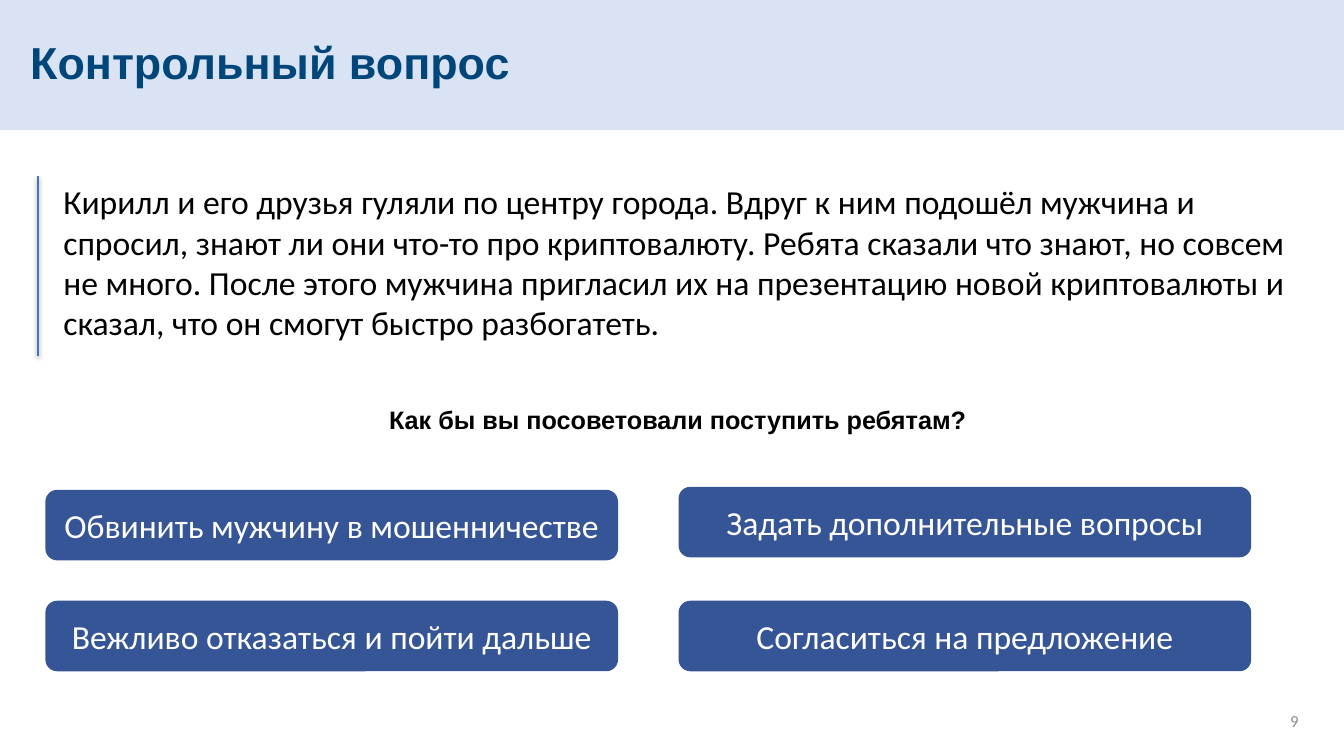
from lxml.etree import SubElement
from pptx import Presentation
from pptx.dml.color import RGBColor
from pptx.enum.shapes import MSO_CONNECTOR, MSO_SHAPE
from pptx.enum.text import MSO_ANCHOR, MSO_AUTO_SIZE, PP_ALIGN
from pptx.oxml.ns import qn
from pptx.util import Inches, Pt

TITLE = {"name": "Arial", "size": Pt(32), "bold": True}
QUESTION = {"name": "Arial", "size": Pt(18), "bold": True}
BODY = {"name": "Calibri", "size": Pt(24), "bold": False}
NUMBER = {"name": "Calibri", "size": Pt(12), "bold": False}

STORY = (
    "Кирилл и его друзья гуляли по центру города. Вдруг к ним подошёл мужчина и "
    "спросил, знают ли они что-то про криптовалюту. Ребята сказали что знают, но "
    "совсем не много. После этого мужчина пригласил их на презентацию новой "
    "криптовалюты и сказал, что он смогут быстро разбогатеть."
)
ANSWERS = [
    ("Обвинить мужчину в мошенничестве", 0, 0.03),
    ("Вежливо отказаться и пойти дальше", 0, 1.13),
    ("Задать дополнительные вопросы", 6.28, 0),
    ("Согласиться на предложение", 6.28, 1.13),
]


def color(value):
    """Turn a hex string into a colour."""
    return RGBColor.from_string(value)


def write(shape, text, style, ink, align=PP_ALIGN.LEFT, anchor=MSO_ANCHOR.TOP):
    """Put one formatted paragraph into a shape."""
    frame = shape.text_frame
    frame.word_wrap = True
    frame.auto_size = MSO_AUTO_SIZE.NONE
    frame.vertical_anchor = anchor
    para = frame.paragraphs[0]
    para.alignment = align
    span = para.add_run()
    span.text = text
    for key, value in style.items():
        setattr(span.font, key, value)
    span.font.color.rgb = color(ink)


def add_block(page, kind, box, fill):
    """Draw a flat filled shape without outline or shadow."""
    block = page.shapes.add_shape(kind, *map(Inches, box))
    block.shadow.inherit = False
    block.fill.solid()
    block.fill.fore_color.rgb = color(fill)
    block.line.fill.background()
    return block


def add_text(page, box, *content):
    """Add a text box with one formatted paragraph."""
    write(page.shapes.add_textbox(*map(Inches, box)), *content)


def add_header(page, box):
    """Place the pale band with the slide title on it."""
    left, top, width, height = box
    band = add_block(page, MSO_SHAPE.RECTANGLE, box, "DAE3F3")
    title = page.shapes.title
    title.element.addprevious(band.element)
    title.left, title.top = Inches(left + 0.2), Inches(top + 0.29)
    title.width, title.height = Inches(7.13), Inches(0.64)
    write(title, "Контрольный вопрос", TITLE, "00467A")


def add_story(page, box):
    """Place the story with a shadowed rule along its left side."""
    left, top, width, height = box
    add_text(page, (left + 0.15, top, width - 0.15, height), STORY, BODY, "000000")
    ends = map(Inches, (left, top, left, top + height))
    rule = page.shapes.add_connector(MSO_CONNECTOR.STRAIGHT, *ends)
    rule.line.color.rgb = color("4472C4")
    rule.line.width = Pt(1.5)
    effects = SubElement(rule.element.spPr, qn("a:effectLst"))
    shadow = SubElement(effects, qn("a:outerShdw"), blurRad="40000", dist="23000",
                        dir="5400000", rotWithShape="0")
    tint = SubElement(shadow, qn("a:srgbClr"), val="000000")
    SubElement(tint, qn("a:alpha"), val="35000")


def add_answers(page, box):
    """Place the answer buttons at their offsets in the box."""
    left, top, width, height = box
    for text, right, down in ANSWERS:
        place = (left + right, top + down, width - 6.28, height - 1.13)
        button = add_block(page, MSO_SHAPE.ROUNDED_RECTANGLE, place, "365596")
        write(button, text, BODY, "FFFFFF", PP_ALIGN.CENTER, MSO_ANCHOR.MIDDLE)


def main():
    """Build and save the question slide."""
    deck = Presentation()
    deck.slide_width, deck.slide_height = Inches(13.33), Inches(7.5)
    page = deck.slides.add_slide(deck.slide_layouts[5])
    add_header(page, (0, 0, 13.33, 1.29))
    add_text(page, (9.98, 6.95, 3, 0.4), "9", NUMBER, "8C8C8C",
             PP_ALIGN.RIGHT, MSO_ANCHOR.MIDDLE)
    add_story(page, (0.38, 1.75, 12.78, 1.78))
    add_answers(page, (0.45, 4.83, 11.96, 1.83))
    add_text(page, (3.76, 3.96, 7.61, 0.4),
             "Как бы вы посоветовали поступить ребятам?", QUESTION, "000000")
    deck.save("out.pptx")


if __name__ == "__main__":
    main()
